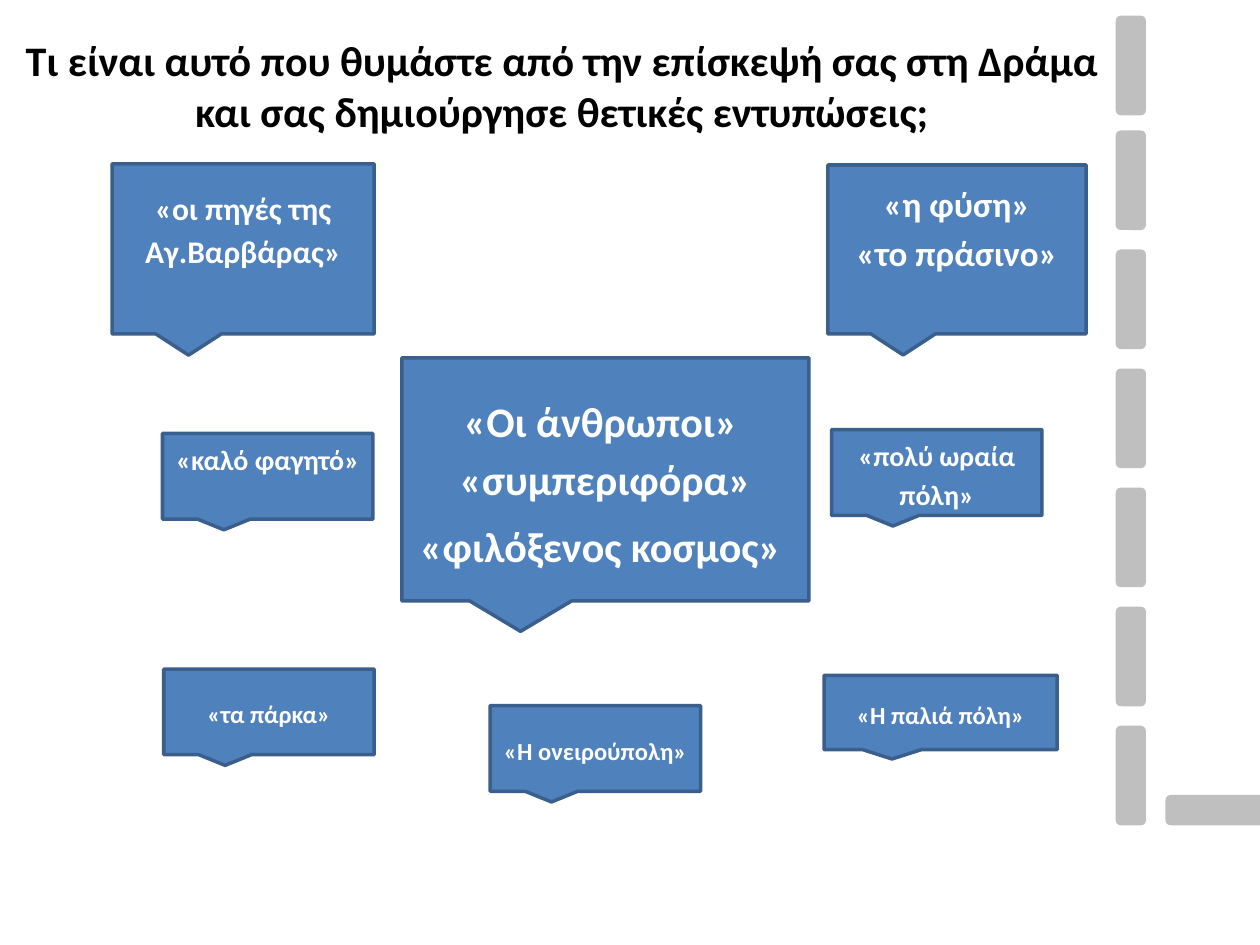
from pptx import Presentation
from pptx.dml.color import RGBColor
from pptx.enum.shapes import MSO_SHAPE
from pptx.enum.text import MSO_ANCHOR, MSO_AUTO_SIZE, PP_ALIGN
from pptx.util import Inches, Pt

CALLOUT = MSO_SHAPE.RECTANGULAR_CALLOUT
ROUNDED = MSO_SHAPE.ROUNDED_RECTANGLE
CENTER = PP_ALIGN.CENTER
MIDDLE = MSO_ANCHOR.MIDDLE
NO_AUTOFIT = MSO_AUTO_SIZE.NONE

FONT = "Calibri"
COLORS = {
    "title": "000000",
    "answer": "FFFFFF",
    "callout": "4F81BD",
    "outline": "3A5F8C",
    "bar": "BFBFBF",
}
BAR_WIDTH, BAR_HEIGHT = 0.79, 0.24
BAR_LEFT, BAR_PITCH = 8.58, 0.945

TITLE = ("Τι είναι αυτό που θυμάστε από την επίσκεψή σας στη Δράμα "
         "και σας δημιούργησε θετικές εντυπώσεις;")

# Box (left, top, width, height), text size, lines, whether the text sits high
ANSWERS = [
    ((6.57, 1.31, 2.05, 1.34), 20, ["«η φύση»", "«το πράσινο»"], True),
    ((0.89, 1.30, 2.08, 1.35), 18, ["«οι πηγές της Αγ.Βαρβάρας»"], True),
    ((6.60, 3.41, 1.67, 0.68), 16, ["«πολύ ωραία πόλη»"], False),
    ((1.29, 3.44, 1.67, 0.68), 16, ["«καλό φαγητό»"], True),
    ((6.54, 5.36, 1.85, 0.59), 14, ["«Η παλιά πόλη»"], False),
    ((1.30, 5.31, 1.67, 0.68), 14, ["«τα πάρκα»"], False),
    ((3.89, 5.60, 1.67, 0.68), 14, ["«Η ονειρούπολη»"], False),
]
MAIN_BOX = (3.19, 2.84, 3.23, 1.93)
MAIN_LINES = ["«Οι άνθρωποι» ", "«συμπεριφόρα»", "«φιλόξενος κοσμος» "]


def rgb(name):
    return RGBColor.from_string(COLORS[name])


def write(frame, lines, size, color, spacing=None):
    frame.word_wrap = True
    frame.auto_size = NO_AUTOFIT
    frame.vertical_anchor = MIDDLE
    for index, line in enumerate(lines):
        paragraph = frame.paragraphs[0] if index == 0 else frame.add_paragraph()
        paragraph.alignment = CENTER
        if spacing:
            paragraph.line_spacing = spacing
        run = paragraph.add_run()
        run.text = line
        run.font.name = FONT
        run.font.size = Pt(size)
        run.font.bold = True
        run.font.color.rgb = rgb(color)


def add_block(shapes, preset, box, fill):
    block = shapes.add_shape(preset, *map(Inches, box))
    block.shadow.inherit = False
    block.fill.solid()
    block.fill.fore_color.rgb = rgb(fill)
    return block


def add_bar(shapes, left, top, rotation=0):
    bar = add_block(shapes, ROUNDED, (left, top, BAR_WIDTH, BAR_HEIGHT), "bar")
    bar.line.fill.background()
    bar.rotation = rotation


def add_answer(shapes, box, size, lines, raised=False):
    callout = add_block(shapes, CALLOUT, box, "callout")
    callout.line.color.rgb = rgb("outline")
    callout.line.width = Pt(2)
    frame = callout.text_frame
    write(frame, lines, size, "answer", spacing=1.15)
    if raised:
        # Keep one line of text free at the bottom
        frame.margin_bottom = Inches(0.05) + Pt(size * 1.4)
    return frame


def main():
    prs = Presentation()
    prs.slide_width, prs.slide_height = Inches(10), Inches(7.5)
    slide = prs.slides.add_slide(prs.slide_layouts[5])
    shapes = slide.shapes

    # Question
    question = shapes.title
    question.left, question.top = Inches(-0.04), Inches(0.05)
    question.width, question.height = Inches(9), Inches(1.25)
    write(question.text_frame, [TITLE], 24, "title")

    # Dashed line of bars on the right
    dashes = shapes.add_group_shape().shapes
    for top in [0.4] + [1.31 + BAR_PITCH * step for step in range(6)]:
        add_bar(dashes, BAR_LEFT, top, rotation=270)

    # Answers, the main one in the middle
    main_answer = add_answer(shapes, MAIN_BOX, 24, MAIN_LINES)
    main_answer.paragraphs[-1].space_before = Pt(5)
    for box, size, lines, raised in ANSWERS:
        add_answer(shapes, box, size, lines, raised)

    # Bar at the corner
    add_bar(shapes, 9.25, 6.31)

    prs.save("out.pptx")


if __name__ == "__main__":
    main()
